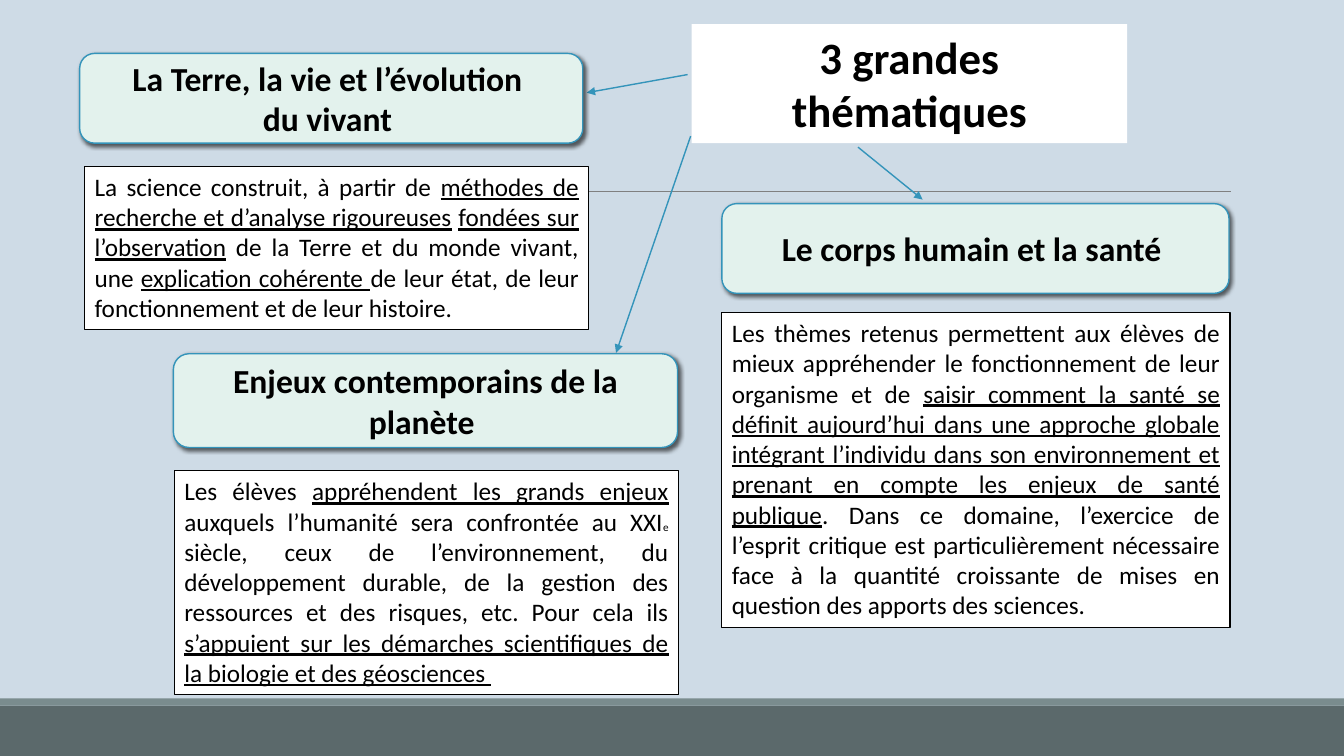
"""Builds a slide that presents the three main themes of a science curriculum."""
import pptx
import pptx.dml.color
import pptx.enum.shapes
import pptx.enum.text
import pptx.oxml
import pptx.oxml.ns
import pptx.util
from pptx.util import Inches

THEME = {
    "font": "Calibri",
    "background": "CEDBE6", "footer": "5B696B", "footer_edge": "7A8C8E", "rule": "808080",
    "accent": "3494BA", "heading_fill": "E3F2ED", "paper": "FFFFFF", "ink": "000000",
    "title_size": 32, "heading_size": 24, "body_size": 18, "ordinal_size": 8,
}
SHAPES = pptx.enum.shapes.MSO_SHAPE
ANCHOR = pptx.enum.text.MSO_ANCHOR
ALIGN = pptx.enum.text.PP_ALIGN
DRAWING_NS = pptx.oxml.ns.nsdecls("a")
SHADOW = (
    f'<a:effectLst {DRAWING_NS}><a:outerShdw blurRad="38100" dist="25400" dir="2700000" '
    f'algn="tl" rotWithShape="0"><a:srgbClr val="{THEME["ink"]}"><a:alpha val="60000"/>'
    '</a:srgbClr></a:outerShdw></a:effectLst>'
)


def color(name):
    """Return the theme colour with this name."""
    return pptx.dml.color.RGBColor.from_string(THEME[name])


def write(text, paragraph, size="body_size", align=ALIGN.CENTER, bold=False, underline=False):
    """Add one formatted run of text to a paragraph."""
    paragraph.alignment = align
    run = paragraph.add_run()
    run.text = text
    run.font.name = THEME["font"]
    run.font.size = pptx.util.Pt(THEME[size])
    run.font.bold = bold
    run.font.underline = underline
    run.font.color.rgb = color("ink")


deck = pptx.Presentation()
deck.slide_width, deck.slide_height = Inches(13.33), Inches(7.5)
slide = deck.slides.add_slide(deck.slide_layouts[5])
slide.background.fill.solid()
slide.background.fill.fore_color.rgb = color("background")

for top, height, fill in [(7, 0.5, "footer"), (6.93, 0.07, "footer_edge")]:
    band = slide.shapes.add_shape(SHAPES.RECTANGLE, 0, Inches(top), deck.slide_width, Inches(height))
    band.shadow.inherit = False
    band.fill.solid()
    band.fill.fore_color.rgb = color(fill)
    band.line.fill.background()

title = slide.shapes.title
title.left, title.top, title.width, title.height = map(Inches, (6.86, 0.24, 4.32, 1.18))
title.fill.solid()
title.fill.fore_color.rgb = color("paper")
title.text_frame.word_wrap = True
title.text_frame.auto_size = pptx.enum.text.MSO_AUTO_SIZE.NONE
title.text_frame.vertical_anchor = ANCHOR.TOP
write("3 grandes thématiques", title.text_frame.paragraphs[0], size="title_size", bold=True)

links = [
    ((1.31, 1.9), (12.21, 1.9), "rule", 0.5, False),
    ((6.82, 0.74), (5.82, 0.92), "accent", 1, True),
    ((6.85, 1.35), (6.11, 3.5), "accent", 1, True),
    ((8.51, 1.46), (9.15, 1.98), "accent", 1, True),
]
for start, end, stroke, weight, has_arrow in links:
    link = slide.shapes.add_connector(
        pptx.enum.shapes.MSO_CONNECTOR.STRAIGHT, *map(Inches, start + end))
    link.line.color.rgb = color(stroke)
    link.line.width = pptx.util.Pt(weight)
    if has_arrow:
        link.line._get_or_add_ln().append(
            pptx.oxml.parse_xml(f'<a:tailEnd {DRAWING_NS} type="triangle"/>'))
    link._element.spPr.append(pptx.oxml.parse_xml(f"<a:effectLst {DRAWING_NS}/>"))

underlined = {"underline": True}
ordinal = {"size": "ordinal_size"}
topics = [
    ((0.79, 0.53, 4.99, 0.89), ["La Terre, la vie et l’évolution ", "du vivant "],
     (0.84, 1.65, 5, 1.62), [
        ("La science construit, à partir de ", {}),
        ("méthodes de recherche et d’analyse rigoureuses", underlined),
        (" ", {}),
        ("fondées sur l’observation", underlined),
        (" de la Terre et du monde vivant, une ", {}),
        ("explication cohérente ", underlined),
        ("de leur état, de leur fonctionnement et de leur histoire. ", {})]),
    ((1.72, 3.51, 5, 0.93), ["Enjeux contemporains de la planète "],
     (1.73, 4.67, 5, 2.22), [
        ("Les élèves ", {}),
        ("appréhendent les grands enjeux ", underlined),
        ("auxquels l’humanité sera confrontée au XXI", {}),
        ("e ", ordinal),
        ("siècle, ceux de l’environnement, du développement durable, de la gestion des "
         "ressources et des risques, etc. Pour cela ils ", {}),
        ("s’appuient sur les démarches scientifiques de la biologie et des géosciences ",
         underlined)]),
    ((7.16, 2.02, 5.03, 0.89), ["Le corps humain et la santé "],
     (7.16, 3.1, 5.04, 3.13), [
        ("Les thèmes retenus permettent aux élèves de mieux appréhender le fonctionnement "
         "de leur organisme et de ", {}),
        ("saisir comment la santé se définit aujourd’hui dans une approche globale intégrant "
         "l’individu dans son environnement et prenant en compte les enjeux de santé publique",
         underlined),
        (". Dans ce domaine, l’exercice de l’esprit critique est particulièrement nécessaire "
         "face à la quantité croissante de mises en question des apports des sciences. ", {})]),
]
for heading_box, heading_lines, summary_box, summary_parts in topics:
    heading = slide.shapes.add_shape(SHAPES.ROUNDED_RECTANGLE, *map(Inches, heading_box))
    heading.fill.solid()
    heading.fill.fore_color.rgb = color("heading_fill")
    heading.line.color.rgb = color("accent")
    heading.line.width = pptx.util.Pt(1)
    heading._element.spPr.append(pptx.oxml.parse_xml(SHADOW))
    heading.text_frame.vertical_anchor = ANCHOR.MIDDLE
    for index, heading_line in enumerate(heading_lines):
        paragraph = heading.text_frame.add_paragraph() if index else heading.text_frame.paragraphs[0]
        write(heading_line, paragraph, size="heading_size", bold=True)

    summary = slide.shapes.add_textbox(*map(Inches, summary_box))
    summary.fill.solid()
    summary.fill.fore_color.rgb = color("paper")
    summary.line.color.rgb = color("ink")
    summary.line.width = pptx.util.Pt(0.75)
    summary.text_frame.word_wrap = True
    for part, style in summary_parts:
        write(part, summary.text_frame.paragraphs[0], align=ALIGN.JUSTIFY, **style)

deck.save("out.pptx")
